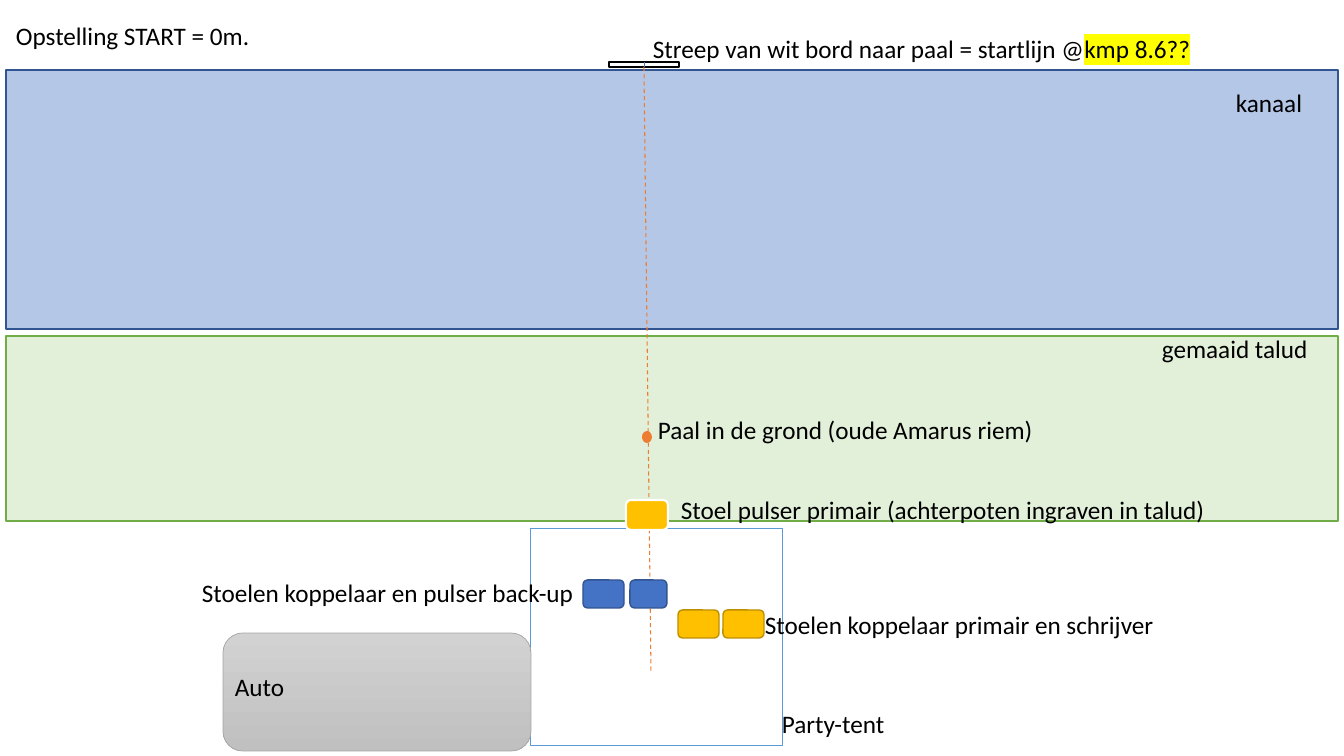
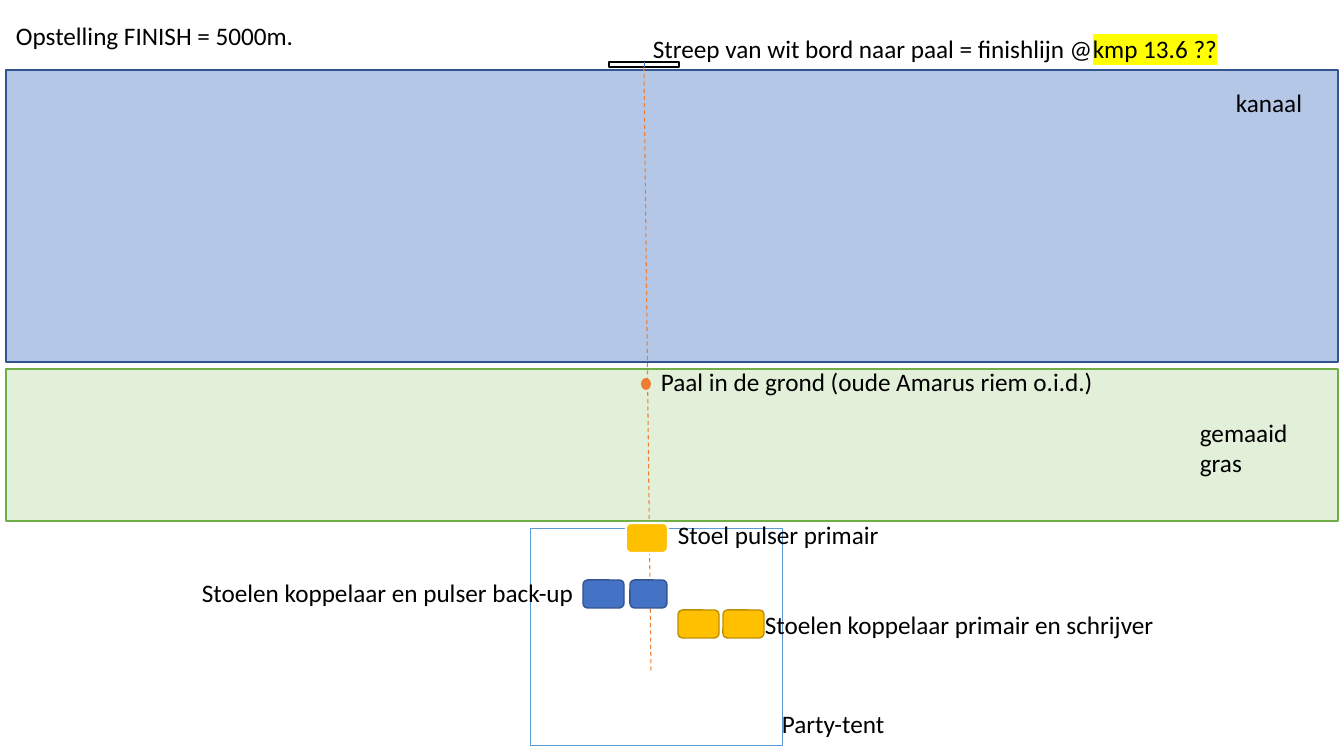
from pptx import Presentation
from pptx.dml.color import RGBColor
from pptx.enum.dml import MSO_LINE
from pptx.enum.shapes import MSO_CONNECTOR, MSO_SHAPE
from pptx.enum.text import MSO_AUTO_SIZE
from pptx.oxml.ns import qn
from pptx.util import Pt
from lxml import etree

PX = 914400 / 100.8
C = {
    "text": "000000", "white": "FFFFFF", "mark": "FFFF00",
    "grass": "E2F0D9", "grass_edge": "70AD47",
    "water": "B4C7E7", "blue": "4472C4", "blue_edge": "325491",
    "gold": "FFC000", "gold_edge": "BD8E00",
    "tent": "5B9BD5", "orange": "ED7D31",
    "car_top": "D2D2D2", "car_bottom": "C0C0C0", "car_edge": "A5A5A5",
}
RECT, ROUND, OVAL = MSO_SHAPE.RECTANGLE, MSO_SHAPE.ROUNDED_RECTANGLE, MSO_SHAPE.OVAL


def add_box(s, kind, box, fill=None, edge=None, weight=1):
    sp = s.shapes.add_shape(kind, *(round(v * PX) for v in box))
    sp.shadow.inherit = False
    if fill:
        sp.fill.solid()
        sp.fill.fore_color.rgb = RGBColor.from_string(C[fill])
    else:
        sp.fill.background()
    if edge:
        sp.line.color.rgb = RGBColor.from_string(C[edge])
        sp.line.width = Pt(weight)
    else:
        sp.line.fill.background()
    return sp


def add_label(s, x, y, w, text, marked=""):
    """Add a text box; the marked words follow the text, highlighted."""
    tb = s.shapes.add_textbox(*(round(v * PX) for v in (x, y, w, 40)))
    tf = tb.text_frame
    tf.word_wrap = True
    tf.auto_size = MSO_AUTO_SIZE.SHAPE_TO_FIT_TEXT
    p = tf.paragraphs[0]
    p.font.name, p.font.size = "Calibri", Pt(18)
    p.font.color.rgb = RGBColor.from_string(C["text"])
    p.add_run().text = text
    if marked:
        r = p.add_run()
        r.text = marked
        hl = etree.SubElement(r._r.get_or_add_rPr(), qn("a:highlight"))
        etree.SubElement(hl, qn("a:srgbClr"), val=C["mark"])


# Labels are (left, top, width, text); bank is the top of the grass.
SETUPS = [
    dict(title="Opstelling START = 0m.", bank=336,
         line=(572, "Streep van wit bord naar paal = startlijn @", "kmp 8.6??"),
         grass=(1152, 328, 175, "gemaaid talud"),
         pole=(642, 431),
         pole_label=(648, 409, 409, "Paal in de grond (oude Amarus riem)"),
         chair_top=500,
         chair_label=(671, 489, 554, "Stoel pulser primair (achterpoten ingraven in talud)"),
         car=True),
    dict(title="Opstelling FINISH = 5000m.", bank=369,
         line=(595, "Streep van wit bord naar paal = finishlijn @", "kmp 13.6 ??"),
         grass=(1190, 412, 155, "gemaaid gras"),
         pole=(641, 378),
         pole_label=(651, 361, 463, "Paal in de grond (oude Amarus riem o.i.d.)"),
         chair_top=523,
         chair_label=(668, 514, 232, "Stoel pulser primair"),
         car=False),
]

prs = Presentation()
prs.slide_width, prs.slide_height = round(1344 * PX), round(756 * PX)

for setup in SETUPS:
    s = prs.slides.add_slide(prs.slide_layouts[6])

    # Canal, bank and tent
    bank = setup["bank"]
    add_box(s, RECT, (6, bank, 1332, 521 - bank), "grass", "grass_edge")
    add_box(s, RECT, (6, 70, 1332, bank - 77), "water", "blue_edge")
    add_label(s, 6, 15, 498, setup["title"])
    add_box(s, RECT, (531, 529, 252, 217), None, "tent", 0.75)
    add_label(s, 772, 703, 131, "Party-tent")
    add_label(s, 1226, 82, 102, "kanaal")

    # White board and sight line
    board = add_box(s, RECT, (609, 62, 70, 5), "white", "text")
    for x, y, colour, weight in ((644, 62, "blue", 0.5), (651, 673, "orange", 0.75)):
        line = s.shapes.add_connector(
            MSO_CONNECTOR.STRAIGHT, *(round(v * PX) for v in (644, 67, x, y)))
        line.begin_connect(board, 2)
        line.line.color.rgb = RGBColor.from_string(C[colour])
        line.line.width = Pt(weight)
        etree.SubElement(line._element.spPr, qn("a:effectLst"))
        if colour == "orange":
            line.line.dash_style = MSO_LINE.DASH
        else:
            line.end_connect(board, 0)
    add_label(s, 643, 28, *setup["line"])

    # Pole and first chair
    add_label(s, *setup["grass"])
    add_box(s, OVAL, (*setup["pole"], 10, 12), "orange")
    add_label(s, *setup["pole_label"])
    add_box(s, ROUND, (626, setup["chair_top"], 42, 30), "gold", "white", 1.5)
    add_label(s, *setup["chair_label"])

    if setup["car"]:
        car = add_box(s, ROUND, (223, 633, 308, 118), None, "car_edge", 0.5)
        car.fill.gradient()
        car.fill.gradient_angle = 270
        for stop, colour in zip(car.fill.gradient_stops, ("car_top", "car_bottom")):
            stop.color.rgb = RGBColor.from_string(C[colour])
        add_label(s, 225, 666, 306, "Auto")

    # Chairs in the tent
    for x, y, w, colour in ((723, 610, 41, "gold"), (678, 610, 41, "gold"),
                            (630, 580, 37, "blue"), (583, 580, 41, "blue")):
        add_box(s, ROUND, (x, y, w, 28), colour, colour + "_edge")
    add_label(s, 755, 604, 431, "Stoelen koppelaar primair en schrijver")
    add_label(s, 192, 572, 401, "Stoelen koppelaar en pulser back-up")

prs.save("out.pptx")
